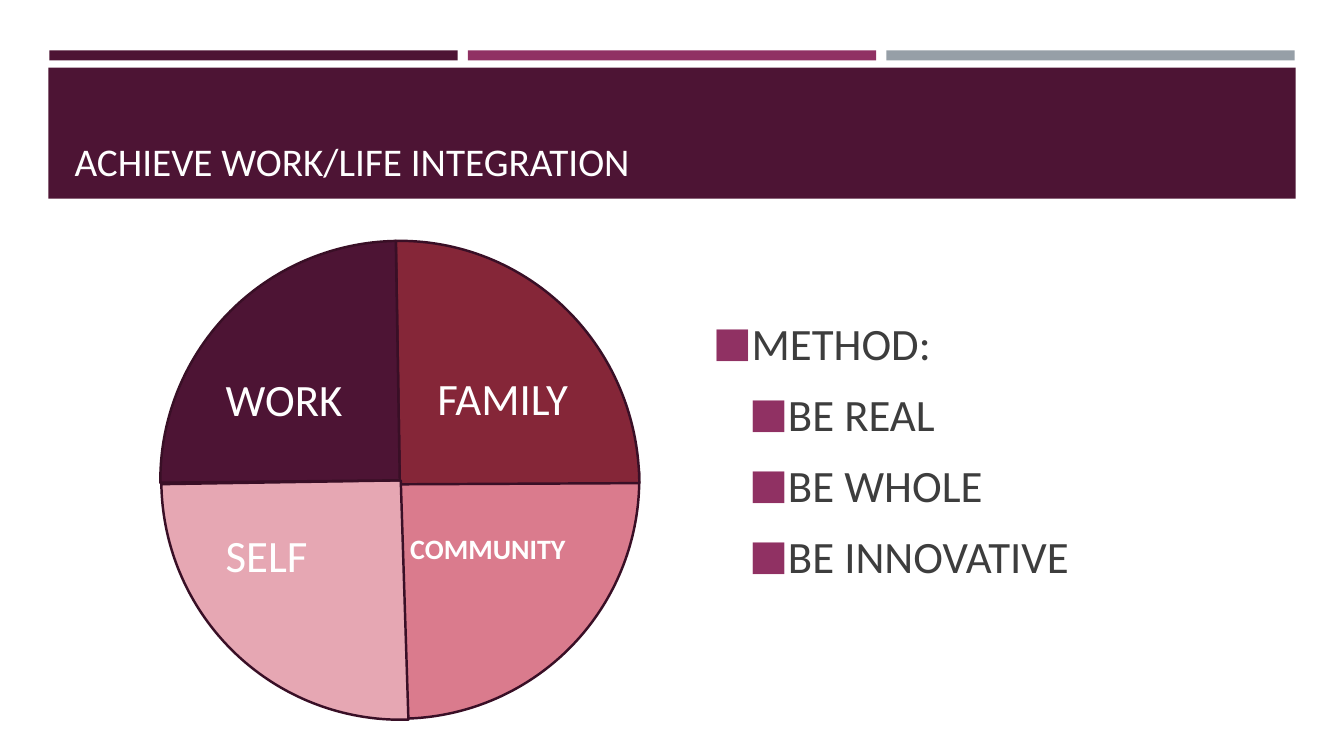
from lxml import etree
from pptx import Presentation
from pptx.dml.color import RGBColor
from pptx.enum.shapes import MSO_SHAPE
from pptx.enum.text import MSO_ANCHOR, MSO_AUTO_SIZE, PP_ALIGN
from pptx.oxml.ns import qn
from pptx.util import Pt

RECT, PIE = MSO_SHAPE.RECTANGLE, MSO_SHAPE.PIE
BOTTOM, MIDDLE, TOP = MSO_ANCHOR.BOTTOM, MSO_ANCHOR.MIDDLE, MSO_ANCHOR.TOP
LEFT, NO_FIT = PP_ALIGN.LEFT, MSO_AUTO_SIZE.NONE

EMU_PER_PX = 9144  # 100 px to the inch
FONT = "Calibri"
COLORS = {
    "plum": "4D1434",
    "magenta": "903163",
    "grey": "969FA7",
    "outline": "390F26",
    "rose": "DA7B8D",
    "red": "852638",
    "pink": "E6A7B3",
    "white": "FFFFFF",
    "ink": "3D3D3D",
}


def px(*lengths):
    return [length * EMU_PER_PX for length in lengths]


def color(name):
    return RGBColor.from_string(COLORS[name])


class SlideBuilder:
    def __init__(self, slide):
        self.slide = slide
        self.shapes = slide.shapes

    def start_group(self):
        """Make all following shapes members of one new group."""
        self.shapes = self.slide.shapes.add_group_shape().shapes

    def shape(self, kind, box, fill):
        shape = self.shapes.add_shape(kind, *px(*box))
        shape.shadow.inherit = False
        shape.fill.solid()
        shape.fill.fore_color.rgb = color(fill)
        shape.line.fill.background()
        return shape

    def quarter(self, box, rotation, start, end, fill):
        """Draw a pie sector between two angles in degrees."""
        sector = self.shape(PIE, box, fill)
        sector.rotation = rotation
        # Angles are stored in 1/60000 degree, adjustments in 1/100000.
        sector.adjustments[0] = start * 0.6
        sector.adjustments[1] = end * 0.6
        sector.line.color.rgb = color("outline")
        sector.line.width = Pt(1.75)

    def add_text(self, paragraph, text, size, ink, bold=False):
        paragraph.alignment = LEFT
        run = paragraph.add_run()
        run.text = text
        run.font.name = FONT
        run.font.size = Pt(size)
        run.font.bold = bold
        run.font.color.rgb = color(ink)

    def frame(self, holder, anchor):
        frame = holder.text_frame
        frame.word_wrap = True
        frame.auto_size = NO_FIT
        frame.vertical_anchor = anchor
        return frame

    def label(self, box, text, size, bold=False):
        holder = self.shapes.add_textbox(*px(*box))
        self.add_text(self.frame(holder, TOP).paragraphs[0], text, size, "white", bold)

    def place(self, holder, box):
        """Move a placeholder into its box and in front of what is drawn so far."""
        holder.left, holder.top, holder.width, holder.height = px(*box)
        self.slide.shapes.element.append(holder.element)

    def title(self, box, text):
        holder = self.slide.shapes.title
        self.place(holder, box)
        self.add_text(self.frame(holder, BOTTOM).paragraphs[0], text, 28, "white")

    def bullets(self, box, items):
        holder = self.slide.placeholders[1]
        self.place(holder, box)
        frame = self.frame(holder, MIDDLE)
        for index, (level, text) in enumerate(items):
            paragraph = frame.add_paragraph() if index else frame.paragraphs[0]
            paragraph.level = level
            paragraph.space_after = Pt(6)
            self.add_text(paragraph, text, 32, "ink")
            self.square_bullet(paragraph, 33 + 36 * level)

    def square_bullet(self, paragraph, indent):
        props = paragraph._p.get_or_add_pPr()
        margin, hanging = px(indent, -33)
        props.set("marL", str(margin))
        props.set("indent", str(hanging))
        bullet_color = etree.SubElement(props, qn("a:buClr"))
        etree.SubElement(bullet_color, qn("a:srgbClr"), val=COLORS["magenta"])
        etree.SubElement(props, qn("a:buSzPct"), val="92000")
        etree.SubElement(props, qn("a:buFont"), typeface=FONT)
        etree.SubElement(props, qn("a:buChar"), char="■")


def main():
    prs = Presentation()
    prs.slide_width, prs.slide_height = px(1333, 750)
    builder = SlideBuilder(prs.slides.add_slide(prs.slide_layouts[1]))

    for column, fill in enumerate(("plum", "magenta", "grey")):
        builder.shape(RECT, (49 + 415 * column, 50, 405, 10), fill)
    builder.shape(RECT, (48, 67, 1237, 130), "plum")
    builder.title((64, 77, 1206, 111), "ACHIEVE WORK/LIFE INTEGRATION")
    builder.bullets((697, 280, 636, 331), [
        (0, "METHOD:"),
        (1, "BE REAL"),
        (1, "BE WHOLE"),
        (1, "BE INNOVATIVE"),
    ])

    builder.start_group()
    for box, rotation, start, end, fill in (
        ((159, 238, 475, 475), 180, 178.17, 269.08, "rose"),
        ((155, 243, 483, 475), 90, 179.08, 269.72, "red"),
        ((160, 239, 475, 475), 270, 178.17, 269.08, "pink"),
        ((159, 239, 475, 475), 0, 179.43, 269.05, "plum"),
    ):
        builder.quarter(box, rotation, start, end, fill)
    builder.label((214, 364, 159, 64), "WORK", 32)
    builder.label((424, 363, 160, 64), "FAMILY", 32)
    builder.label((214, 519, 106, 64), "SELF", 32)
    builder.label((397, 522, 212, 44), "COMMUNITY", 20, bold=True)

    prs.save("out.pptx")


if __name__ == "__main__":
    main()
